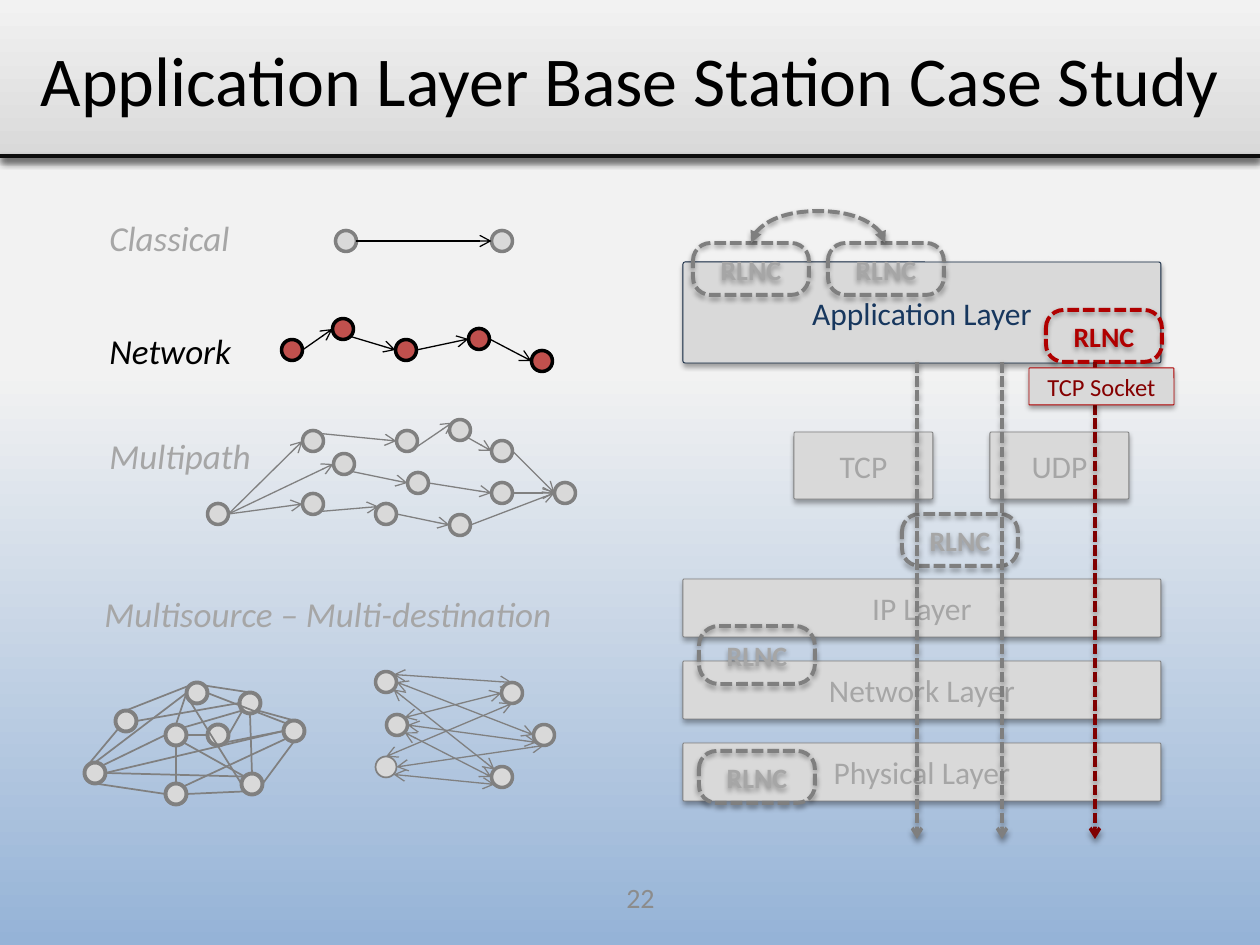
from lxml import etree
from pptx import Presentation, util as u
from pptx.dml.color import RGBColor
from pptx.enum import dml, shapes, text
from pptx.oxml.ns import qn

PX = 914400 / 126
BLACK, INK = RGBColor(0, 0, 0), RGBColor(0x0D, 0x0D, 0x0D)
PALE, LIGHT = RGBColor(0xD9, 0xD9, 0xD9), RGBColor(0xF2, 0xF2, 0xF2)
SKY = RGBColor(0x95, 0xB3, 0xD7)
GRAY, EDGE = RGBColor(0x80, 0x80, 0x80), RGBColor(0x7F, 0x7F, 0x7F)
FADED, NUMBER = RGBColor(0xA6, 0xA6, 0xA6), RGBColor(0x8C, 0x8C, 0x8C)
NAVY, NAVY_TEXT = RGBColor(0x0F, 0x24, 0x3E), RGBColor(0x17, 0x37, 0x5E)
RED, DARK_RED = RGBColor(0xB0, 0, 0), RGBColor(0x80, 0, 0)
SOCKET_RED, NODE_RED = RGBColor(0x85, 0, 0), RGBColor(0xC0, 0x50, 0x4D)

# Shadows: opacity %, blur pt, distance pt
BAND_SHADOW, BOX_SHADOW, LINE_SHADOW = (40, 4, 3), (35, 3.1, 1.8), (38, 3.1, 1.6)

# Topology headings: text, left, top, width, colour
HEADINGS = [
    ("Classical", 97, 210, 155, FADED),
    ("Network", 97, 323, 157, BLACK),
    ("Multipath", 97, 428, 176, FADED),
    ("Multisource – Multi-destination", 92, 586, 485, FADED),
]

# Topologies: node centres, then edges as "node.side node.side"
DOT = 21
TOPOLOGIES = [
    dict(nodes=dict(a=(346, 241), b=(502, 241)), edges="a.e b.w",
         fill=PALE, outline=GRAY, weight=2, edge=BLACK, edge_weight=0.75, ends=["tail"]),
    dict(nodes=dict(a=(292, 350), b=(343, 329), c=(406, 350), d=(479, 339), e=(542, 361)),
         edges="a.e b.w, b.se c.w, c.e d.w, d.e e.w",
         fill=NODE_RED, outline=BLACK, weight=2, edge=BLACK, edge_weight=0.75, ends=["tail"]),
    dict(nodes=dict(a=(218, 514), b=(344, 464), c=(565, 493), d=(502, 493), e=(313, 504),
                    f=(460, 525), g=(313, 441), h=(386, 514), i=(407, 441), j=(460, 430),
                    k=(502, 451), l=(418, 483)),
         edges="a.e b.w, d.e c.w, a.e e.w, f.e c.w, a.e g.w, g.ne i.w, i.se j.nw, "
               "j.se k.w, k.e c.w, e.se h.nw, h.e f.w, b.se l.w, l.e d.w",
         fill=PALE, outline=GRAY, weight=2, edge=GRAY, edge_weight=0.75, ends=["tail"]),
    dict(nodes=dict(p=(544, 735), q=(397, 725), r=(502, 777), s=(386, 767), t=(512, 693),
                    u=(386, 682)),
         edges="u.e p.w, q.e p.sw, q.se r.w, s.n t.s, q.ne t.w, u.se r.nw, s.e p.s, "
               "s.se r.sw, u.ne t.n",
         fill=PALE, outline=GRAY, weight=2, thin="s", edge=GRAY, edge_weight=0.75,
         ends=["head", "tail"]),
    dict(nodes=dict(a=(176, 735), b=(95, 773), c=(218, 735), d=(126, 721), e=(250, 703),
                    f=(176, 794), g=(197, 693), h=(294, 731), i=(252, 784)),
         edges="b.e h.w, g.e h.nw, g.ne e.n, g.sw i.w, i.e h.s, h.sw f.ne, d.n g.nw, "
               "d.e e.w, d.sw b.nw, b.n g.w, b.ne a.w, g.w a.n, a.e c.w, a.ne e.sw, "
               "e.se h.n, f.e i.sw, b.s f.w, b.e i.nw, a.s f.n, a.se i.nw, i.n e.s, "
               "e.sw c.e, c.se h.w",
         fill=PALE, outline=GRAY, weight=2.25, edge=GRAY, edge_weight=1, ends=[]),
]

# Protocol stack: text, left, top, width, height, line colour, text colour, size
LAYERS = [("Application Layer", 683, 262, 478, 101, NAVY, NAVY_TEXT, 18)]
LAYERS += [(name, 683, 579 + 82 * row, 478, 58, EDGE, FADED, 18)
           for row, name in enumerate(["IP Layer", "Network Layer", "Physical Layer"])]
LAYERS += [("TCP", 794, 432, 139, 67, EDGE, FADED, 18),
           ("UDP", 990, 432, 139, 67, EDGE, FADED, 18)]
SOCKET = ("TCP Socket", 1029, 368, 145, 37, RED, SOCKET_RED, 14)

# Coding blocks: left, top, height, line colour, text colour
CODERS = [(902, 514, 52, EDGE, FADED), (699, 626, 58, EDGE, FADED),
          (1046, 310, 52, RED, RED), (693, 243, 52, EDGE, FADED),
          (828, 243, 52, EDGE, FADED), (699, 751, 52, EDGE, FADED)]
FLOWS = [(1095, DARK_RED), (1002, EDGE), (917, EDGE)]

prs = Presentation()
prs.slide_width, prs.slide_height = u.Inches(10), u.Inches(7.5)
slide = prs.slides.add_slide(prs.slide_layouts[6])


def px(*lengths):
    return [u.Emu(round(length * PX)) for length in lengths]


def add_shadow(effects, opacity, blur, distance):
    shadow = etree.SubElement(effects, qn("a:outerShdw"), blurRad=str(u.Pt(blur)),
                              dist=str(u.Pt(distance)), dir="5400000", rotWithShape="0")
    color = etree.SubElement(shadow, qn("a:srgbClr"), val="000000")
    etree.SubElement(color, qn("a:alpha"), val=str(opacity * 1000))


def write(shape, words, size, color, bold=False, italic=False,
          align=text.PP_ALIGN.CENTER, wrap=True):
    frame = shape.text_frame
    frame.word_wrap = wrap
    frame.vertical_anchor = text.MSO_ANCHOR.MIDDLE
    paragraph = frame.paragraphs[0]
    paragraph.text, paragraph.alignment = words, align
    font = paragraph.font
    font.name, font.size, font.bold, font.italic = "Calibri", u.Pt(size), bold, italic
    font.color.rgb = color


def add_block(kind, left, top, width, height, fill=None, line=None, weight=1,
              shadow=None, corner=None):
    block = slide.shapes.add_shape(kind, *px(left, top, width, height))
    block.shadow.inherit = False
    if shadow:
        add_shadow(block._element.spPr.find(qn("a:effectLst")), *shadow)
    if corner is not None:
        block.adjustments[0] = corner
    if fill is None:
        block.fill.background()
    else:
        block.fill.solid()
        block.fill.fore_color.rgb = fill
    if line is None:
        block.line.fill.background()
    else:
        block.line.color.rgb, block.line.width = line, u.Pt(weight)
    return block


def add_line(start, end, color, weight, ends=(), arrow="arrow", dashed=False,
             shadow=None, kind=shapes.MSO_CONNECTOR.STRAIGHT):
    line = slide.shapes.add_connector(kind, *px(*start, *end))
    line.line.color.rgb, line.line.width = color, u.Pt(weight)
    if dashed:
        line.line.dash_style = dml.MSO_LINE.SQUARE_DOT
    for tip in ends:
        etree.SubElement(line.line._get_or_add_ln(), qn(f"a:{tip}End"), type=arrow)
    effects = etree.SubElement(line._element.spPr, qn("a:effectLst"))
    if shadow:
        add_shadow(effects, *shadow)
    return line


def add_layer(words, left, top, width, height, line, color, size):
    layer = add_block(shapes.MSO_SHAPE.ROUNDED_RECTANGLE, left, top, width, height,
                      PALE, line, 0.5, BOX_SHADOW, 0.022)
    write(layer, words, size, color)


def side_point(nodes, site):
    name, side = site.split(".")
    reach = DOT / 2 * (0.71 if len(side) == 2 else 1)
    x, y = nodes[name]
    return (x + reach * (("e" in side) - ("w" in side)),
            y + reach * (("s" in side) - ("n" in side)))


# Background and title band
for height, lower, stop in [(945, SKY, 0.61), (157.5, PALE, 1)]:
    band = add_block(shapes.MSO_SHAPE.RECTANGLE, 0, 0, 1260, height, shadow=BAND_SHADOW)
    band.fill.gradient()
    band.fill.gradient_angle = 90
    for mark, color, position in zip(band.fill.gradient_stops, (lower, LIGHT), (0, stop)):
        mark.color.rgb, mark.position = color, position
add_line((0, 156), (1260, 156), INK, 2, shadow=LINE_SHADOW)
write(slide.shapes.add_textbox(*px(0, 0, 1260, 157)),
      "Application Layer Base Station Case Study", 40, BLACK)

# Topologies
for topology in TOPOLOGIES:
    nodes = topology["nodes"]
    for name, (x, y) in nodes.items():
        weight = 1 if name == topology.get("thin") else topology["weight"]
        add_block(shapes.MSO_SHAPE.OVAL, x - DOT / 2, y - DOT / 2, DOT, DOT,
                  topology["fill"], topology["outline"], weight)
    for edge in topology["edges"].split(", "):
        start, end = (side_point(nodes, site) for site in edge.split())
        add_line(start, end, topology["edge"], topology["edge_weight"], topology["ends"])
for words, left, top, width, color in HEADINGS:
    write(slide.shapes.add_textbox(*px(left, top, width, 55)), words, 20, color,
          italic=True, align=text.PP_ALIGN.LEFT, wrap=False)

# Protocol stack and coding blocks
for layer in LAYERS:
    add_layer(*layer)
for left, top, height, line, color in CODERS:
    coder = add_block(shapes.MSO_SHAPE.ROUNDED_RECTANGLE, left, top, 116, height,
                      None, line, 2.25, BOX_SHADOW, 0.34)
    coder.line.dash_style = dml.MSO_LINE.SQUARE_DOT
    write(coder, "RLNC", 16, color, bold=True)

# Arc between the two application coders: a thin curve turned upright
arc = add_line((818, 176), (818, 310), EDGE, 2.25, ["head", "tail"], "triangle", True,
               LINE_SHADOW, shapes.MSO_CONNECTOR.CURVE)
arc.width = u.Emu(1500)
frame = arc._element.spPr.find(qn("a:xfrm"))
frame.set("rot", "16200000")
frame.set("flipH", "1")
guides = arc._element.spPr.find(qn("a:prstGeom")).get_or_add_avLst()
etree.SubElement(guides, qn("a:gd"), name="adj1", fmla="val -16000000")

# Flows down the stack
for x, color in FLOWS:
    add_line((x, 362), (x, 839), color, 2, ["tail"], dashed=True, shadow=LINE_SHADOW)
add_layer(*SOCKET)

# Slide number
write(slide.shapes.add_textbox(*px(494, 872, 293, 50)), "22", 16, NUMBER)

prs.save("out.pptx")
